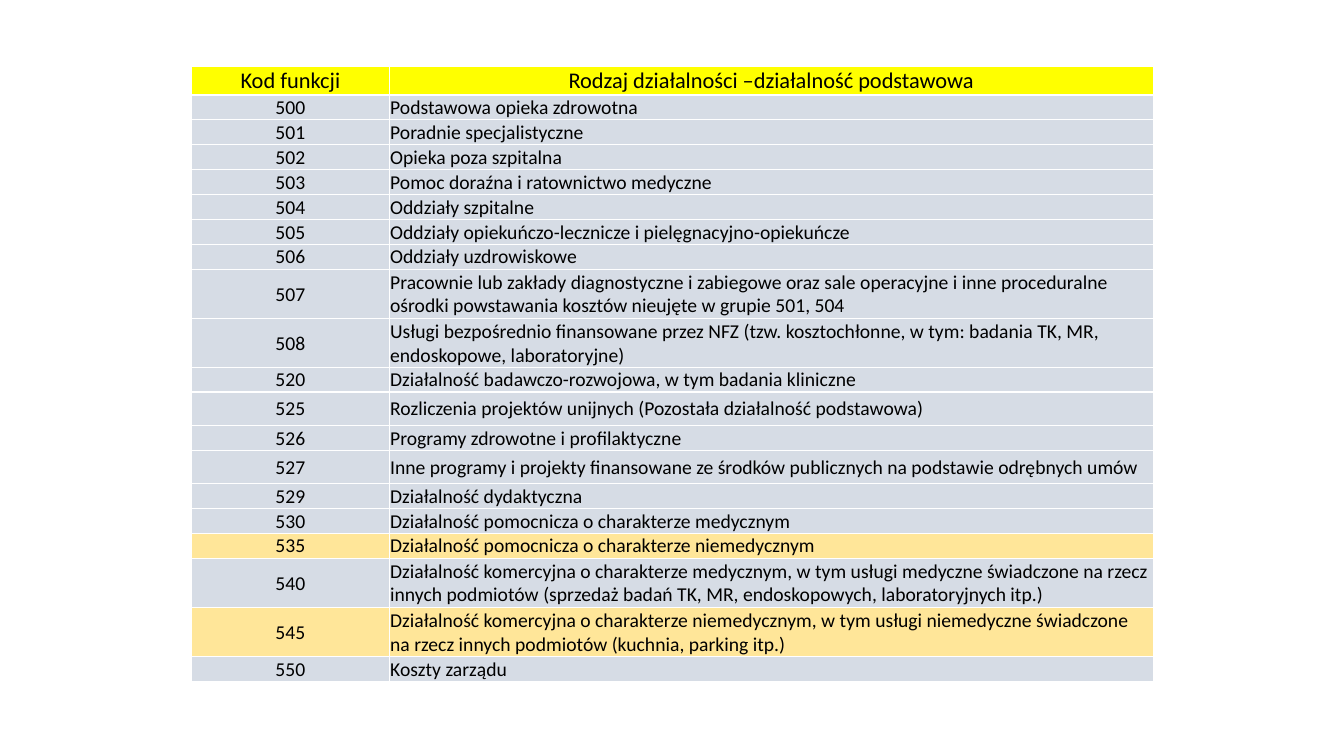
from pptx import Presentation
from pptx.dml.color import RGBColor
from pptx.enum.text import MSO_ANCHOR as Anchor, PP_ALIGN as Align
from pptx.oxml import parse_xml
from pptx.oxml.ns import nsdecls
from pptx.util import Inches, Pt

WHITE, BLACK = "FFFFFF", "000000"
YELLOW, GREY, AMBER = "FFFF00", "D6DCE5", "FFE699"
LOW, MID, TALL = 0.16, 0.33, 0.49

HEAD = ("Kod funkcji", "Rodzaj działalności –działalność podstawowa")
# Code, activity, least row height
ROWS = [
    ("500", "Podstawowa opieka zdrowotna", LOW),
    ("501", "Poradnie specjalistyczne", LOW),
    ("502", "Opieka poza szpitalna", LOW),
    ("503", "Pomoc doraźna i ratownictwo medyczne", LOW),
    ("504", "Oddziały szpitalne", LOW),
    ("505", "Oddziały opiekuńczo-lecznicze i pielęgnacyjno-opiekuńcze", LOW),
    ("506", "Oddziały uzdrowiskowe", LOW),
    ("507", "Pracownie lub zakłady diagnostyczne i zabiegowe oraz sale operacyjne "
            "i inne proceduralne ośrodki powstawania kosztów nieujęte w grupie 501, 504", TALL),
    ("508", "Usługi bezpośrednio finansowane przez NFZ (tzw. kosztochłonne, w tym: "
            "badania TK, MR, endoskopowe, laboratoryjne)", MID),
    ("520", "Działalność badawczo-rozwojowa, w tym badania kliniczne", LOW),
    ("525", "Rozliczenia projektów unijnych (Pozostała działalność podstawowa)", MID),
    ("526", "Programy zdrowotne i profilaktyczne", LOW),
    ("527", "Inne programy i projekty finansowane ze środków publicznych "
            "na podstawie odrębnych umów", MID),
    ("529", "Działalność dydaktyczna", LOW),
    ("530", "Działalność pomocnicza o charakterze medycznym", LOW),
    ("535", "Działalność pomocnicza o charakterze niemedycznym", LOW),
    ("540", "Działalność komercyjna o charakterze medycznym, w tym usługi medyczne "
            "świadczone na rzecz innych podmiotów (sprzedaż badań TK, MR, "
            "endoskopowych, laboratoryjnych itp.)", TALL),
    ("545", "Działalność komercyjna o charakterze niemedycznym, w tym usługi "
            "niemedyczne świadczone na rzecz innych podmiotów (kuchnia, parking itp.)", TALL),
    ("550", "Koszty zarządu", LOW),
]
MARKED = {"535", "545"}


def color(code):
    return RGBColor.from_string(code)


def write(frame, text, size=14, font="Calibri", ink=BLACK, align=Align.LEFT):
    para = frame.paragraphs[0]
    para.alignment = align
    run = para.add_run()
    run.text = text
    run.font.size, run.font.name, run.font.bold = Pt(size), font, False
    run.font.color.rgb = color(ink)


def edge(cell, ink=WHITE, width=1):
    props = cell._tc.get_or_add_tcPr()
    for spot, side in enumerate("LRTB"):
        props.insert(spot, parse_xml(
            f'<a:ln{side} {nsdecls("a")} w="{Pt(width)}"><a:solidFill>'
            f'<a:srgbClr val="{ink}"/></a:solidFill></a:ln{side}>'))


def style(cell, text, fill, **form):
    cell.fill.solid()
    cell.fill.fore_color.rgb = color(fill)
    cell.vertical_anchor = Anchor.MIDDLE
    cell.margin_left = cell.margin_right = cell.margin_top = Inches(0.01)
    cell.margin_bottom = 0
    edge(cell)
    write(cell.text_frame, text, **form)


def code_table(slide, left, top, width, height):
    shape = slide.shapes.add_table(len(ROWS) + 1, 2, left, top, width, height)
    table = shape.table
    table.first_row = table.horz_banding = False

    # Columns and rows
    table.columns[0].width = Inches(1.96)
    table.columns[1].width = width - Inches(1.96)
    for row, tall in zip(table.rows, [LOW] + [item[2] for item in ROWS]):
        row.height = Inches(tall)
    shape.height = height

    # Header
    for col, text in enumerate(HEAD):
        style(table.cell(0, col), text, YELLOW, size=16, align=Align.CENTER)

    # Function codes
    for row, (code, name, _) in enumerate(ROWS, 1):
        fill = AMBER if code in MARKED else GREY
        style(table.cell(row, 0), code, fill, align=Align.CENTER)
        style(table.cell(row, 1), name, fill)


def main():
    deck = Presentation()
    deck.slide_width, deck.slide_height = Inches(13.33), Inches(7.5)
    slide = deck.slides.add_slide(deck.slide_layouts[6])
    code_table(slide, Inches(1.9), Inches(0.66), Inches(9.54), Inches(6.04))
    deck.save("out.pptx")


if __name__ == "__main__":
    main()
